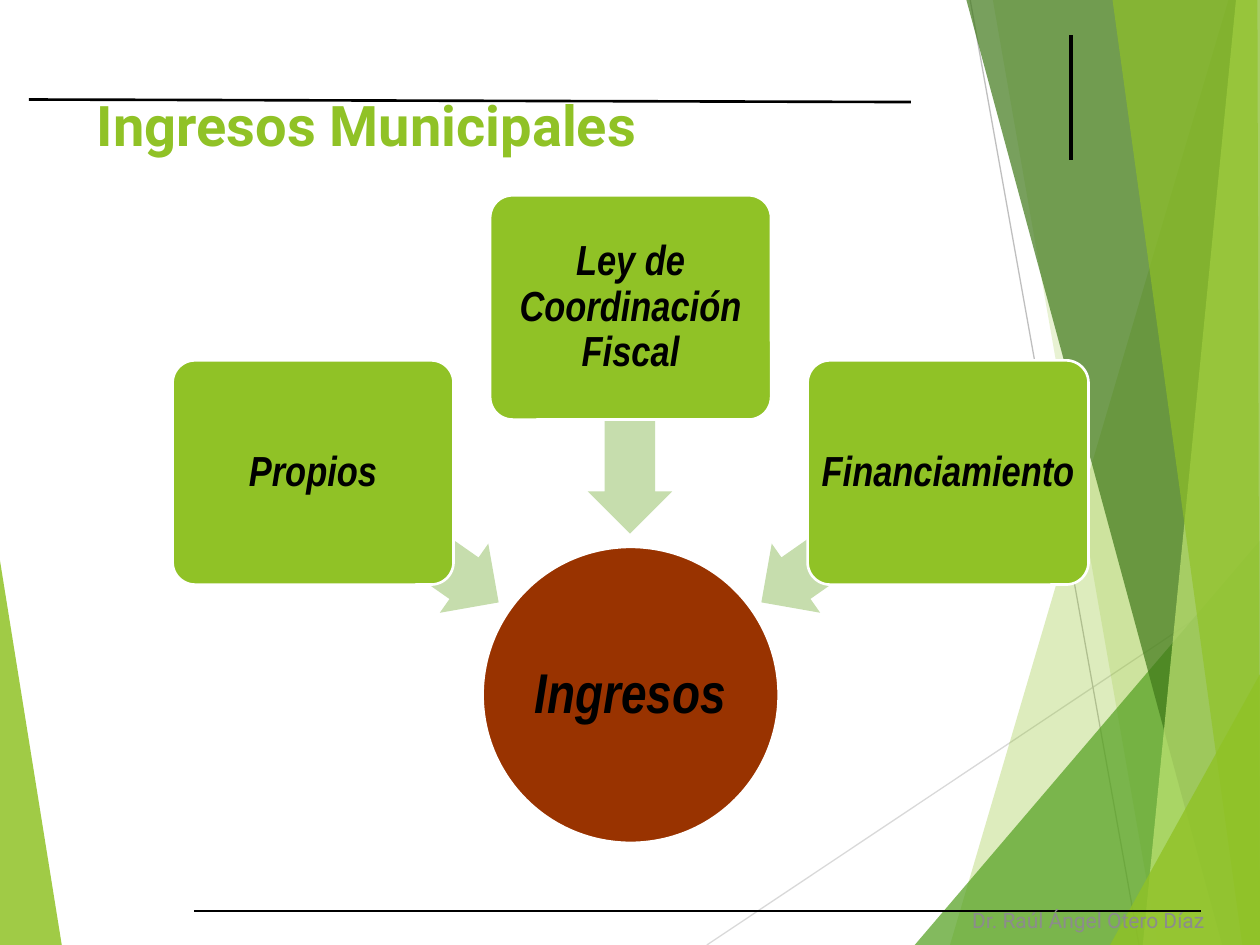
from lxml import etree
from pptx import Presentation
from pptx.dml.color import RGBColor
from pptx.enum.shapes import MSO_CONNECTOR, MSO_SHAPE
from pptx.enum.text import MSO_ANCHOR, PP_ALIGN
from pptx.oxml.ns import qn
from pptx.util import Inches, Pt

LINE = MSO_CONNECTOR.STRAIGHT
OVAL, ROUND, ARROW = MSO_SHAPE.OVAL, MSO_SHAPE.ROUNDED_RECTANGLE, MSO_SHAPE.LEFT_ARROW
TOP, MIDDLE = MSO_ANCHOR.TOP, MSO_ANCHOR.MIDDLE
LEFT, CENTER, RIGHT = PP_ALIGN.LEFT, PP_ALIGN.CENTER, PP_ALIGN.RIGHT

COLORS = {
    "lime": "90C226", "green": "54A021", "forest": "3F7819", "pale": "C0E474",
    "mint": "C6DDAD", "rust": "993300", "black": "000000", "white": "FFFFFF",
    "gray": "8C8C8C", "silver": "BFBFBF", "light": "D9D9D9",
}
FACETS = [
    ("lime", 30, [(9.75, 0), (7.54, 7.5), (10, 7.5), (10, 0)]),
    ("lime", 20, [(7.88, 0), (9.19, 7.5), (10, 7.5), (10, 0)]),
    ("green", 72, [(7.26, 7.5), (10, 4.29), (10, 7.5)]),
    ("forest", 70, [(7.67, 0), (9.7, 7.5), (10, 7.5), (10, 0)]),
    ("pale", 70, [(9.81, 0), (9.07, 7.5), (10, 7.5), (10, 0)]),
    ("lime", 65, [(8.83, 0), (9.86, 7.5), (10, 7.5), (9.98, 0)]),
    ("lime", 80, [(8.81, 7.5), (10, 5.35), (10, 7.5)]),
]
RULES = [
    ((8.5, 0.28), (8.5, 1.27), 1.75),
    ((7.23, 0.81), (0.23, 0.79), 1.5),
    ((1.54, 7.23), (9.53, 7.23), 1.5),
]
SOURCES = [
    ("Propios", 1.37, 2.86, (2.32, 3.93), 215),
    ("Ley de Coordinación Fiscal", 3.89, 1.55, (4.1, 3), 270),
    ("Financiamiento", 6.41, 2.86, (5.88, 3.93), 325),
]


def rgb(name):
    """Return the named colour."""
    return RGBColor.from_string(COLORS[name])


def add_facet(slide, color, alpha, points):
    """Draw a translucent polygon."""
    spots = [(Inches(x), Inches(y)) for x, y in points]
    pen = slide.shapes.build_freeform(*spots[0])
    pen.add_line_segments(spots[1:], close=True)
    facet = pen.convert_to_shape()
    facet.shadow.inherit = False
    facet.fill.solid()
    facet.fill.fore_color.rgb = rgb(color)
    facet.line.fill.background()
    tint = facet.fill._xPr.find(qn("a:solidFill"))[0]
    etree.SubElement(tint, qn("a:alpha")).set("val", str(alpha * 1000))


def add_rule(slide, start, end, width, color="black"):
    """Draw a straight line."""
    ends = [Inches(value) for value in (*start, *end)]
    rule = slide.shapes.add_connector(LINE, *ends)
    rule.line.color.rgb = rgb(color)
    rule.line.width = Pt(width)
    etree.SubElement(rule._element.spPr, qn("a:effectLst"))


def set_text(shape, text, size, color, font, align, anchor):
    """Write one paragraph and return it."""
    frame = shape.text_frame
    frame.word_wrap = True
    frame.vertical_anchor = anchor
    frame.text = text
    para = frame.paragraphs[0]
    para.alignment = align
    para.font.size = Pt(size)
    para.font.name = font
    para.font.color.rgb = rgb(color)
    return para


def add_label(slide, box, text, size, color, align, anchor):
    """Add a text box and return its paragraph."""
    label = slide.shapes.add_textbox(*map(Inches, box))
    return set_text(label, text, size, color, "Roboto", align, anchor)


def add_shape(slide, kind, box, color):
    """Add a filled preset shape without an outline."""
    shape = slide.shapes.add_shape(kind, *map(Inches, box))
    shape.shadow.inherit = False
    shape.fill.solid()
    shape.fill.fore_color.rgb = rgb(color)
    shape.line.fill.background()
    return shape


def add_node(slide, kind, box, color, text, size):
    """Add a diagram node with its caption."""
    node = add_shape(slide, kind, box, color)
    node.line.color.rgb = rgb("white")
    node.line.width = Pt(1.5)
    frame = node.text_frame
    frame.margin_left = frame.margin_right = Inches(0.02)
    frame.margin_top = frame.margin_bottom = Inches(0.02)
    para = set_text(node, text, size, "black", "Arial Narrow", CENTER, MIDDLE)
    para.line_spacing = 0.9
    para.font.bold = para.font.italic = True
    return node


def add_source(slide, text, left, top, spot, angle):
    """Add an income source and its arrow to the hub."""
    arrow = add_shape(slide, ARROW, (*spot, 1.8, 0.67), "mint")
    arrow.adjustments[0] = 0.6
    arrow.adjustments[1] = 0.5
    arrow.rotation = angle
    node = add_node(slide, ROUND, (left, top, 2.23, 1.78), "lime", text, 24)
    node.adjustments[0] = 0.1


def main():
    """Build and save the slide."""
    deck = Presentation()
    deck.slide_width, deck.slide_height = Inches(10), Inches(7.5)
    slide = deck.slides.add_slide(deck.slide_layouts[6])
    add_facet(slide, "lime", 85, [(0, 4.45), (0.49, 7.5), (0, 7.5)])
    add_rule(slide, (5.61, 7.5), (10, 4.57), 0.75, "light")
    add_rule(slide, (7.7, 0), (9.04, 7.5), 0.75, "silver")
    for facet in FACETS:
        add_facet(slide, *facet)
    for rule in RULES:
        add_rule(slide, *rule)
    add_label(slide, (7.33, 7.1, 2.33, 0.4), "Dr. Raúl Ángel Otero Díaz",
              12, "gray", RIGHT, MIDDLE)
    title = add_label(slide, (0.67, 0.67, 6.94, 1.44), "Ingresos Municipales",
                      32, "lime", LEFT, TOP)
    title.font.bold = True
    add_node(slide, OVAL, (3.83, 4.34, 2.35, 2.35), "rust", "Ingresos", 32)
    for source in SOURCES:
        add_source(slide, *source)
    deck.save("out.pptx")


if __name__ == "__main__":
    main()
